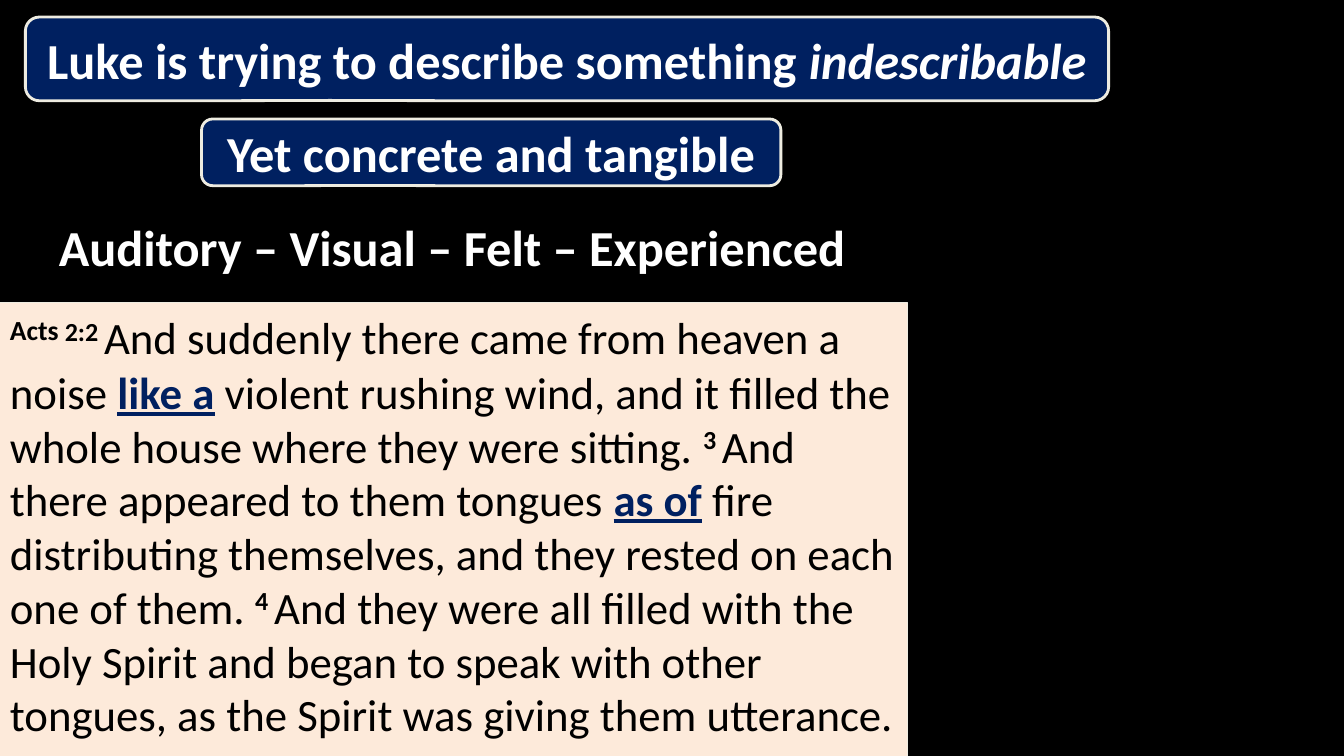
from lxml.etree import SubElement
from pptx import Presentation
from pptx.dml.color import RGBColor
from pptx.enum.shapes import MSO_SHAPE
from pptx.enum.text import MSO_ANCHOR, PP_ALIGN
from pptx.oxml.ns import qn
from pptx.util import Cm, Pt

COLORS = {"black": "000000", "navy": "002060", "white": "FFFFFF",
          "cream": "EEECE1", "peach": "FDEADA"}
FONT = "Calibri"
CALLOUT_POINT = (-0.219, 0.496, 0.167)

PASSAGE = [
    ("Acts ", "verse", 34),
    ("2:2 ", "verse", 32),
    ("And suddenly there came from heaven a noise ", "plain", 32),
    ("like a", "simile", 32),
    (" violent rushing wind, and it filled the whole house where they were sitting. ", "plain", 32),
    ("3 ", "verse", 32),
    ("And there appeared to them tongues ", "plain", 32),
    ("as of", "simile", 32),
    (" fire distributing themselves, and they rested on each one of them. ", "plain", 32),
    ("4 ", "verse", 32),
    ("And they were all filled with the Holy Spirit and began to speak with other "
     "tongues, as the Spirit was giving them utterance.", "plain", 32),
]
HEADLINES = [
    ((0.64, 0.43, 27.3, 2.11),
     [("Luke is trying to describe something ", "title", 36), ("indescribable", "emphasis", 36)]),
    ((5.08, 3, 14.6, 1.68), [("Yet concrete and tangible", "title", 36)]),
]
SENSES = [("Auditory – Visual – Felt – Experienced", "title", 36)]


def color(name):
    return RGBColor.from_string(COLORS[name])


def add_box(page, kind, place, fill, line_width=0):
    box = page.shapes.add_shape(kind, *(Cm(length) for length in place))
    box.shadow.inherit = False
    box.fill.solid()
    box.fill.fore_color.rgb = color(fill)
    if line_width:
        box.line.color.rgb = color("cream")
        box.line.width = Pt(line_width)
    else:
        box.line.fill.background()
    box.text_frame.word_wrap = True
    return box


def add_callout(page, place, fill, line_width=0):
    box = add_box(page, MSO_SHAPE.ROUNDED_RECTANGULAR_CALLOUT, place, fill, line_width)
    for index, value in enumerate(CALLOUT_POINT):
        box.adjustments[index] = value
    box.text_frame.vertical_anchor = MSO_ANCHOR.MIDDLE
    return box


def write(box, pieces, text_color, align):
    para = box.text_frame.paragraphs[0]
    para.alignment = align
    for text, style, size in pieces:
        span = para.add_run()
        span.text = text
        span.font.name = FONT
        span.font.size = Pt(size)
        span.font.bold = style != "plain"
        span.font.italic = style == "emphasis"
        span.font.underline = style == "simile"
        span.font.color.rgb = color("navy" if style == "simile" else text_color)
        if style == "verse":
            span.font._element.set("baseline", "30000")


def main():
    deck = Presentation()
    deck.slide_width, deck.slide_height = Cm(33.87), Cm(19.05)
    page = deck.slides.add_slide(deck.slide_layouts[6])
    page.background.fill.solid()
    page.background.fill.fore_color.rgb = color("black")

    passage = add_box(page, MSO_SHAPE.RECTANGLE, (0, 7.62, 22.86, 11.46), "peach", 0.75)
    passage.text_frame.vertical_anchor = MSO_ANCHOR.TOP
    write(passage, PASSAGE, "black", PP_ALIGN.LEFT)

    for place, pieces in HEADLINES:
        headline = add_callout(page, place, "navy", 2)
        write(headline, pieces, "white", PP_ALIGN.CENTER)

    senses = add_callout(page, (0, 5.36, 22.86, 1.7), "black")
    tint = senses.fill._xPr.find(qn("a:solidFill"))[0]
    SubElement(tint, qn("a:alpha")).set("val", "64000")
    senses.text_frame.margin_left = Cm(1.4)
    write(senses, SENSES, "white", PP_ALIGN.LEFT)

    deck.save("out.pptx")


if __name__ == "__main__":
    main()
